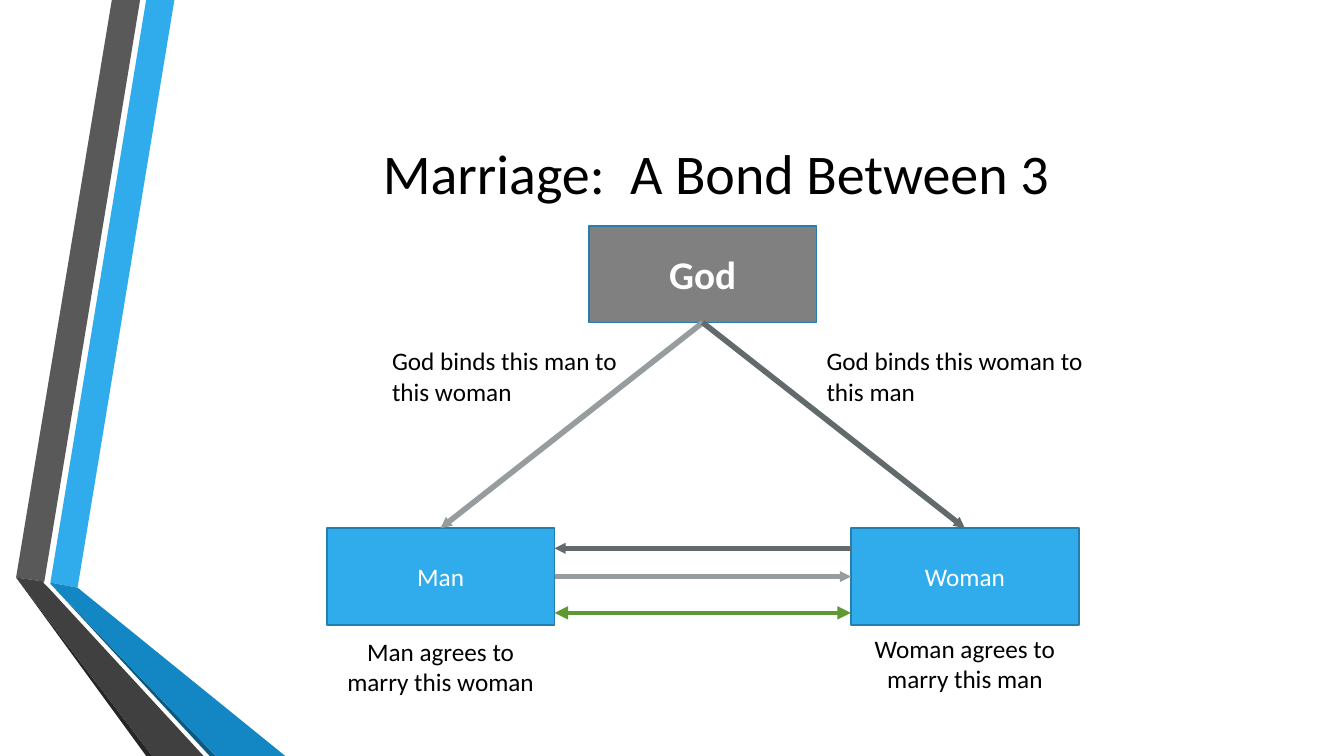
import pptx
import pptx.dml.color
import pptx.enum.shapes
import pptx.enum.text
import pptx.oxml.ns
import pptx.util
import lxml.etree

RGBColor = pptx.dml.color.RGBColor
Align = pptx.enum.text.PP_ALIGN
Anchor = pptx.enum.text.MSO_ANCHOR
AutoSize = pptx.enum.text.MSO_AUTO_SIZE

BLACK = RGBColor(0x00, 0x00, 0x00)
WHITE = RGBColor(0xFF, 0xFF, 0xFF)
BLUE = RGBColor(0x30, 0xAC, 0xEC)
MID_BLUE = RGBColor(0x12, 0x87, 0xC3)
DEEP_BLUE = RGBColor(0x0C, 0x5A, 0x82)
EDGE_BLUE = RGBColor(0x24, 0x7F, 0xAF)
GRAY = RGBColor(0x80, 0x80, 0x80)
SLATE = RGBColor(0x59, 0x59, 0x59)
CHARCOAL = RGBColor(0x40, 0x40, 0x40)
SOOT = RGBColor(0x26, 0x26, 0x26)
LIGHT_ARROW = RGBColor(0x97, 0x9D, 0x9F)
DARK_ARROW = RGBColor(0x63, 0x6A, 0x6C)
GREEN = RGBColor(0x5F, 0x99, 0x34)


class BondPage:
    scale = 9144
    font_name = "Calibri"

    def __init__(self, deck):
        self.page = deck.slides.add_slide(deck.slide_layouts[6])

    def emu(self, *lengths):
        return [pptx.util.Emu(length * self.scale) for length in lengths]

    def set_text(self, shape, text, size, color, align, anchor, bold=False, auto_size=AutoSize.NONE):
        frame = shape.text_frame
        para = frame.paragraphs[0]
        span = para.add_run()
        span.text = text
        formats = [
            (frame, {"word_wrap": True, "vertical_anchor": anchor, "auto_size": auto_size}),
            (para, {"alignment": align}),
            (span.font, {"name": self.font_name, "size": pptx.util.Pt(size), "bold": bold}),
            (span.font.color, {"rgb": color}),
        ]
        for target, values in formats:
            for name, value in values.items():
                setattr(target, name, value)

    def ribbon(self, points, color):
        builder = self.page.shapes.build_freeform(*points[0], scale=self.scale)
        builder.add_line_segments(points[1:], close=True)
        shape = builder.convert_to_shape()
        shape.shadow.inherit = False
        shape.fill.solid()
        shape.fill.fore_color.rgb = color
        shape.line.fill.background()

    def box(self, left, top, width, height, text, size, color, bold=False):
        shape = self.page.shapes.add_shape(
            pptx.enum.shapes.MSO_SHAPE.RECTANGLE, *self.emu(left, top, width, height))
        shape.shadow.inherit = False
        shape.fill.solid()
        shape.fill.fore_color.rgb = color
        shape.line.color.rgb = EDGE_BLUE
        shape.line.width = pptx.util.Pt(1.25)
        self.set_text(shape, text, size, WHITE, Align.CENTER, Anchor.MIDDLE, bold)

    def title(self, left, top, width, height, text):
        shape = self.page.shapes.add_textbox(*self.emu(left, top, width, height))
        self.set_text(shape, text, 40, BLACK, Align.CENTER, Anchor.MIDDLE)

    def label(self, left, top, width, text, align):
        shape = self.page.shapes.add_textbox(*self.emu(left, top, width, 71))
        self.set_text(shape, text, 18, BLACK, align, Anchor.TOP,
                      auto_size=AutoSize.SHAPE_TO_FIT_TEXT)

    def arrow(self, start, end, color, width=4, ends=("headEnd",), head_size="sm"):
        connector = self.page.shapes.add_connector(
            pptx.enum.shapes.MSO_CONNECTOR.STRAIGHT, *self.emu(*start, *end))
        connector.line.color.rgb = color
        connector.line.width = pptx.util.Pt(width)
        qn = pptx.oxml.ns.qn
        properties = connector._element.spPr
        outline = properties.find(qn("a:ln"))
        for end_name in ends:
            lxml.etree.SubElement(outline, qn("a:" + end_name),
                                  type="triangle", w=head_size, len=head_size)
        lxml.etree.SubElement(properties, qn("a:effectLst"))


def main():
    deck = pptx.Presentation()
    deck.slide_width = pptx.util.Inches(13.33)
    deck.slide_height = pptx.util.Inches(7.5)
    bond = BondPage(deck)

    ribbons = [
        ([(50, 578), (77, 583), (173, 0), (145, 0)], BLUE),
        ([(139, 0), (111, 0), (16, 573), (44, 577)], SLATE),
        ([(16, 573), (145, 750), (151, 750)], SOOT),
        ([(50, 579), (208, 750), (214, 750)], DEEP_BLUE),
        ([(50, 579), (214, 750), (283, 750), (77, 583), (50, 578)], MID_BLUE),
        ([(202, 750), (48, 583), (43, 578), (44, 577), (16, 573), (151, 750)], CHARCOAL),
    ]
    for points, color in ribbons:
        bond.ribbon(points, color)

    bond.title(162, 75, 1096, 192, "Marriage:  A Bond Between 3")

    box_width, box_height = 226, 96
    god_left, god_top = 584, 224
    man_left, woman_left, couple_top = 324, 844, 524
    half = box_width // 2
    bond.box(god_left, god_top, box_width, box_height, "God", 28, GRAY, bold=True)
    bond.box(man_left, couple_top, box_width, box_height, "Man", 18, BLUE)
    bond.box(woman_left, couple_top, box_width, box_height, "Woman", 18, BLUE)

    god_foot = (god_left + half, god_top + box_height)
    bond.arrow((man_left + half, couple_top), god_foot, LIGHT_ARROW)
    bond.arrow((woman_left + half, couple_top), god_foot, DARK_ARROW)

    man_right = man_left + box_width
    bond.arrow((man_right, 608), (woman_left, 608), GREEN, 3.25, ("headEnd", "tailEnd"), "med")

    bond.label(810, 338, 294, "God binds this woman to this man", Align.LEFT)
    bond.label(379, 338, 270, "God binds this man to this woman", Align.LEFT)
    bond.label(man_left, 626, box_width, "Man agrees to marry this woman", Align.CENTER)
    bond.label(woman_left, 623, box_width, "Woman agrees to marry this man", Align.CENTER)

    bond.arrow((man_right, 544), (woman_left, 544), DARK_ARROW)
    bond.arrow((woman_left, 572), (man_right, 572), LIGHT_ARROW)

    deck.save("out.pptx")


if __name__ == "__main__":
    main()
